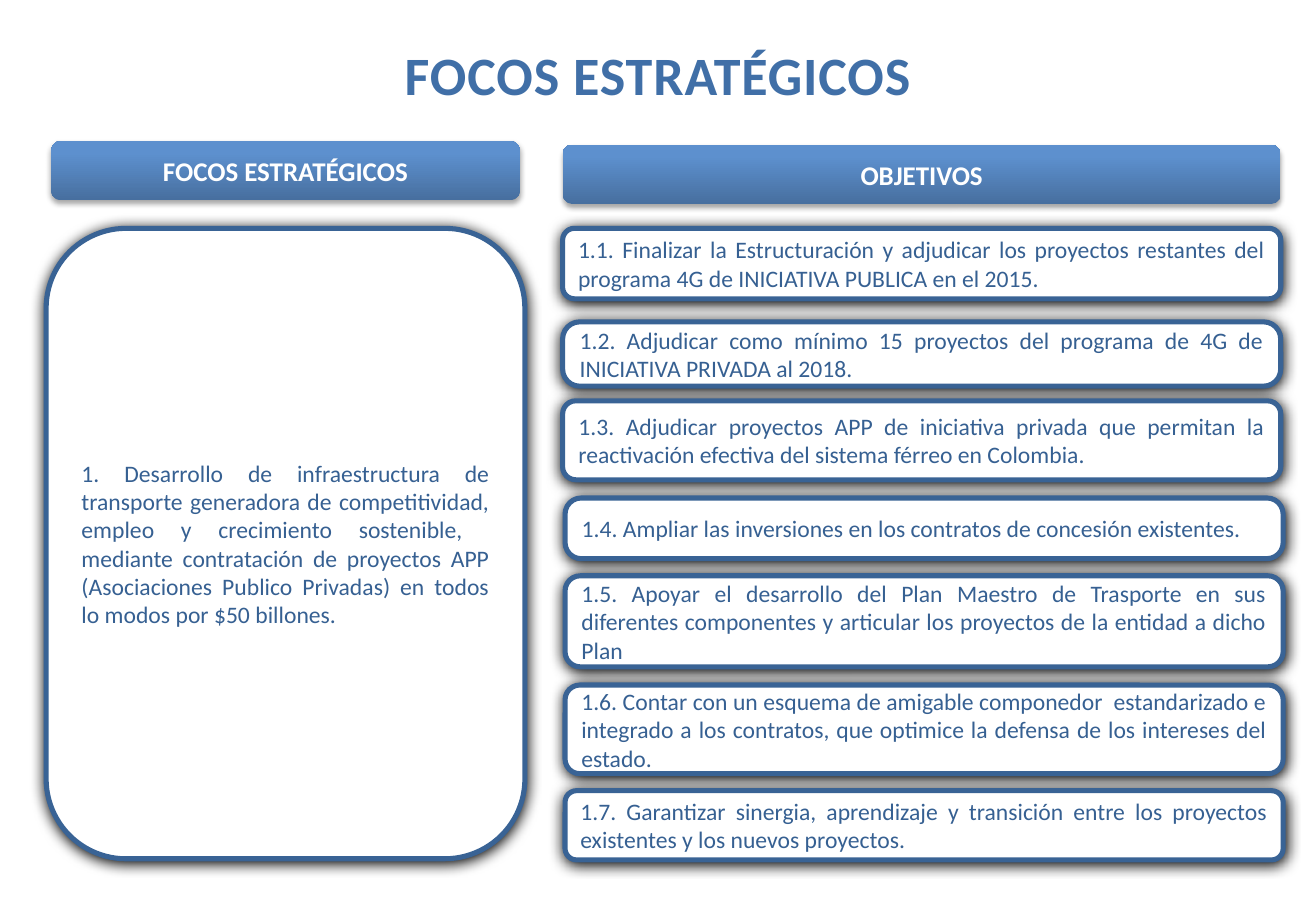
from lxml import etree
from pptx import Presentation
from pptx.dml.color import RGBColor
from pptx.enum.shapes import MSO_SHAPE
from pptx.enum.text import MSO_ANCHOR, PP_ALIGN
from pptx.oxml.ns import qn
from pptx.util import Inches, Pt

ROUND_RECT = MSO_SHAPE.ROUNDED_RECTANGLE
MIDDLE = MSO_ANCHOR.MIDDLE
CENTER = PP_ALIGN.CENTER
JUSTIFY = PP_ALIGN.JUSTIFY

WHITE = RGBColor(0xFF, 0xFF, 0xFF)
TITLE_BLUE = RGBColor(0x40, 0x6F, 0xA7)
TEXT_BLUE = RGBColor(0x36, 0x60, 0x92)
BORDER_BLUE = RGBColor(0x39, 0x63, 0x95)
BLACK = RGBColor(0, 0, 0)
HEADER_STOPS = [
    (0, RGBColor(0x47, 0x6F, 0x9F)),
    (80, RGBColor(0x5D, 0x90, 0xCE)),
    (100, RGBColor(0x5B, 0x91, 0xD1)),
]

FOCUS = (
    "1. Desarrollo de infraestructura de transporte generadora de competitividad, "
    "empleo y crecimiento sostenible,  mediante contratación de proyectos APP "
    "(Asociaciones Publico Privadas) en todos lo modos por $50 billones."
)
OBJECTIVES = [
    (4.63, 1.88, 0.58, 0.167,
     "1.1. Finalizar la Estructuración y adjudicar los proyectos restantes del "
     "programa 4G de INICIATIVA PUBLICA en el 2015."),
    (4.63, 2.65, 0.53, 0.267,
     "1.2. Adjudicar como mínimo 15 proyectos del programa de 4G de "
     "INICIATIVA PRIVADA al 2018."),
    (4.63, 3.3, 0.65, 0.167,
     "1.3. Adjudicar proyectos APP de iniciativa privada que permitan la "
     "reactivación efectiva del sistema férreo en Colombia."),
    (4.65, 4.1, 0.5, 0.267,
     "1.4. Ampliar las inversiones en los contratos de concesión existentes."),
    (4.65, 4.74, 0.75, 0.167,
     "1.5. Apoyar el desarrollo del Plan Maestro de Trasporte en sus diferentes "
     "componentes y articular los proyectos de la entidad a dicho Plan"),
    (4.65, 5.64, 0.73, 0.167,
     "1.6. Contar con un esquema de amigable componedor  estandarizado e integrado "
     "a los contratos, que optimice la defensa de los intereses del estado."),
    (4.65, 6.51, 0.57, 0.167,
     "1.7. Garantizar sinergia, aprendizaje y transición entre los proyectos "
     "existentes y los nuevos proyectos."),
]


def write_text(tf, text, size=14, color=TEXT_BLUE, bold=False, align=JUSTIFY, spacing=None):
    tf.word_wrap = True
    p = tf.paragraphs[0]
    p.alignment = align
    r = p.add_run()
    r.text = text
    r.font.name = "Calibri"
    r.font.size = Pt(size)
    r.font.bold = bold
    r.font.color.rgb = color
    if spacing:
        r.font._element.set("spc", str(int(spacing * 100)))


def add_color(parent, color, alpha=100):
    clr = etree.SubElement(parent, qn("a:srgbClr"), val=str(color))
    if alpha < 100:
        etree.SubElement(clr, qn("a:alpha"), val=str(alpha * 1000))


def add_shadow(s, blur, dist, alpha):
    s.shadow.inherit = False
    effects = s._element.spPr.find(qn("a:effectLst"))
    shadow = etree.SubElement(
        effects, qn("a:outerShdw"), blurRad=str(Pt(blur)), dist=str(Pt(dist)),
        dir="5400000", rotWithShape="0")
    add_color(shadow, BLACK, alpha)


def add_round_rect(slide, box):
    s = slide.shapes.add_shape(ROUND_RECT, *map(Inches, box))
    s.text_frame.vertical_anchor = MIDDLE
    return s


def add_title(slide, box, text):
    tb = slide.shapes.add_textbox(*map(Inches, box))
    write_text(tb.text_frame, text, size=32, color=TITLE_BLUE, bold=True,
               align=CENTER, spacing=0.5)


def add_header(slide, box, text):
    s = add_round_rect(slide, box)
    s.line.fill.background()
    s.fill.gradient()
    s.fill.gradient_angle = 90
    stops = s._element.spPr.find(".//" + qn("a:gsLst"))
    for gs in list(stops):
        stops.remove(gs)
    for pos, color in HEADER_STOPS:
        add_color(etree.SubElement(stops, qn("a:gs"), pos=str(pos * 1000)), color)
    add_shadow(s, 3.1, 1.8, 35)
    write_text(s.text_frame, text, size=16, color=WHITE, bold=True, align=CENTER)


def add_card(slide, box, text, rounding=0.167):
    s = add_round_rect(slide, box)
    s.adjustments[0] = rounding
    s.fill.solid()
    s.fill.fore_color.rgb = WHITE
    s.line.color.rgb = BORDER_BLUE
    s.line.width = Pt(3)
    add_shadow(s, 8.5, 1, 100)
    write_text(s.text_frame, text)


def main():
    prs = Presentation()
    prs.slide_width = Inches(10.83)
    prs.slide_height = Inches(7.5)
    slide = prs.slides.add_slide(prs.slide_layouts[6])
    add_title(slide, (0, 0.29, 10.83, 0.64), "FOCOS ESTRATÉGICOS")
    add_header(slide, (0.42, 1.16, 3.86, 0.49), "FOCOS ESTRATÉGICOS")
    add_card(slide, (0.38, 1.88, 3.94, 5.19), FOCUS)
    add_header(slide, (4.63, 1.19, 5.91, 0.49), "OBJETIVOS")
    for left, top, height, rounding, text in OBJECTIVES:
        add_card(slide, (left, top, 5.91, height), text, rounding)
    prs.save("out.pptx")


if __name__ == "__main__":
    main()
